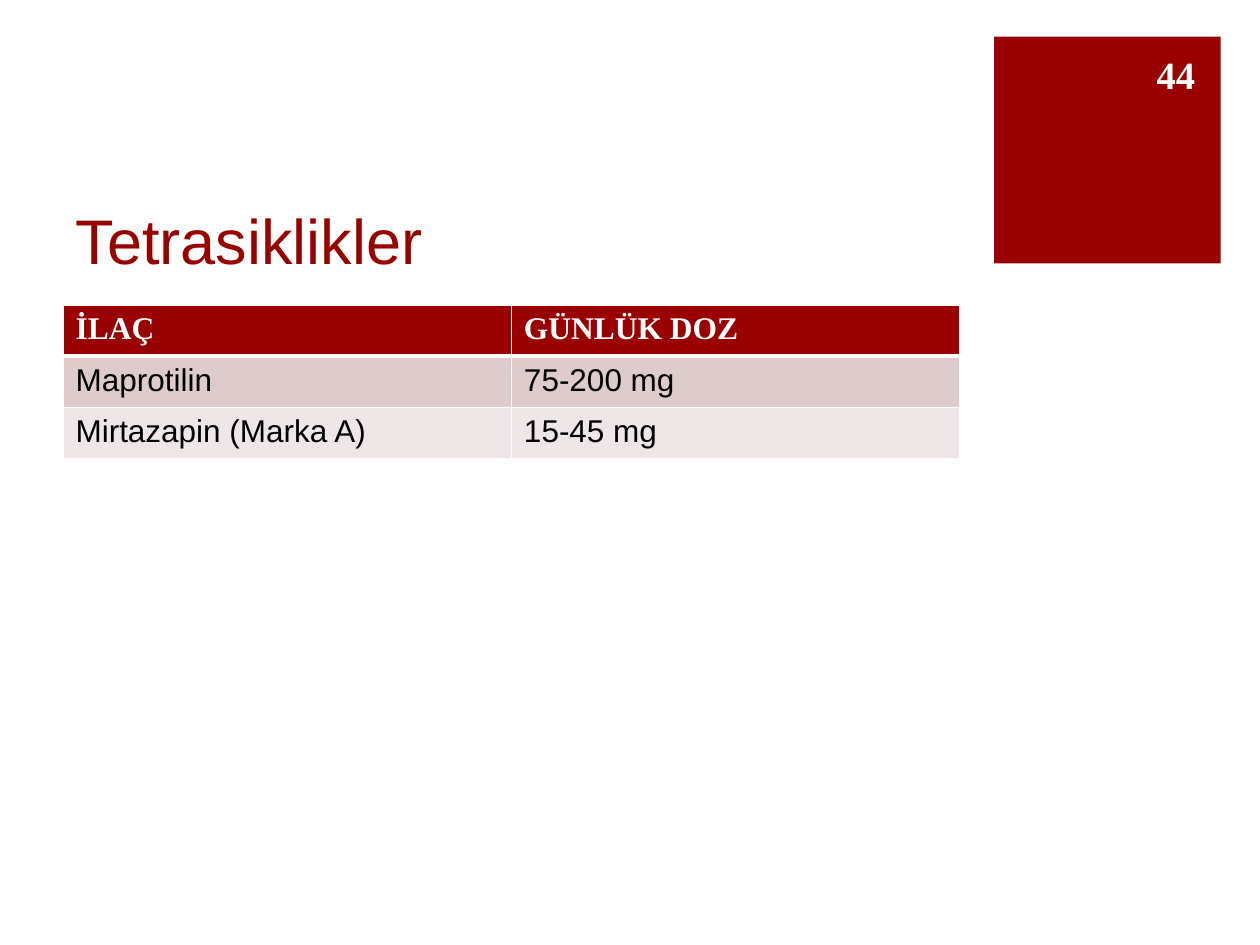
from dataclasses import dataclass
from lxml.etree import SubElement
from pptx import Presentation
from pptx.dml.color import RGBColor
from pptx.enum.shapes import MSO_SHAPE
from pptx.enum.text import MSO_ANCHOR, PP_ALIGN
from pptx.oxml.ns import qn
from pptx.util import Cm, Pt

TITLE = "Tetrasiklikler"
NUMBER = "44"
ROWS = [
    ("İLAÇ", "GÜNLÜK DOZ"),
    ("Maprotilin", "75-200 mg"),
    ("Mirtazapin (Marka A)", "15-45 mg"),
]


@dataclass(frozen=True)
class Theme:
    red: str = "990000"
    white: str = "FFFFFF"
    black: str = "000000"
    bands: tuple = ("DECBCB", "EFE7E7")
    sans: str = "Arial"
    serif: str = "Times New Roman"
    head: int = 36
    page: int = 22
    body: int = 18
    thin: int = 1
    thick: int = 3


LOOK = Theme()
LEFT, WIDTH = 1.27, 18.08
ROW = 1.03
SIDE = 4.57


def style(item, **values):
    for name, value in values.items():
        setattr(item, name, value)


def paint(fill, color):
    fill.solid()
    fill.fore_color.rgb = RGBColor.from_string(color)


def write(frame, text, color, align=PP_ALIGN.LEFT, **values):
    para = frame.paragraphs[0]
    para.alignment = align
    run = para.add_run()
    run.text = text
    style(run.font, **values)
    run.font.color.rgb = RGBColor.from_string(color)


def edge(cell, side, width):
    line = SubElement(cell._tc.get_or_add_tcPr(), qn("a:ln" + side), w=str(Pt(width)))
    fill = SubElement(line, qn("a:solidFill"))
    SubElement(fill, qn("a:srgbClr"), val=LOOK.white)


def add_square(slide):
    box = slide.shapes.add_shape(
        MSO_SHAPE.RECTANGLE, Cm(20.04), Cm(0.74), Cm(SIDE), Cm(SIDE))
    box.shadow.inherit = False
    paint(box.fill, LOOK.red)
    box.line.fill.background()


def add_title(slide):
    title = slide.shapes.title
    style(title, left=Cm(LEFT), top=Cm(2.54), width=Cm(WIDTH), height=Cm(3.18))
    style(title.text_frame, vertical_anchor=MSO_ANCHOR.BOTTOM, word_wrap=True)
    write(title.text_frame, TITLE, LOOK.red,
          size=Pt(LOOK.head), name=LOOK.sans, bold=False)


def add_doses(slide):
    table = slide.shapes.add_table(
        len(ROWS), len(ROWS[0]), Cm(LEFT), Cm(6.15),
        Cm(WIDTH), Cm(ROW * len(ROWS))).table
    for r, row in enumerate(ROWS):
        top = r == 0
        edges = {
            "L": LOOK.thin,
            "R": LOOK.thin,
            "T": LOOK.thick if r == 1 else LOOK.thin,
            "B": LOOK.thick if top else LOOK.thin,
        }
        for c, text in enumerate(row):
            cell = table.cell(r, c)
            for side, width in edges.items():
                edge(cell, side, width)
            paint(cell.fill, LOOK.red if top else LOOK.bands[(r - 1) % 2])
            write(cell.text_frame, text, LOOK.white if top else LOOK.black,
                  size=Pt(LOOK.body), bold=top,
                  name=LOOK.serif if top else LOOK.sans)


def add_number(slide):
    box = slide.shapes.add_textbox(Cm(22.94), Cm(0.99), Cm(1.4), Cm(1.02))
    style(box.text_frame, word_wrap=True, vertical_anchor=MSO_ANCHOR.MIDDLE)
    write(box.text_frame, NUMBER, LOOK.white, PP_ALIGN.RIGHT,
          size=Pt(LOOK.page), name=LOOK.serif, bold=True)


def main():
    deck = Presentation()
    style(deck, slide_width=Cm(25.4), slide_height=Cm(19.05))
    slide = deck.slides.add_slide(deck.slide_layouts[5])
    paint(slide.background.fill, LOOK.white)
    for add in (add_square, add_title, add_doses, add_number):
        add(slide)
    deck.save("out.pptx")


if __name__ == "__main__":
    main()
